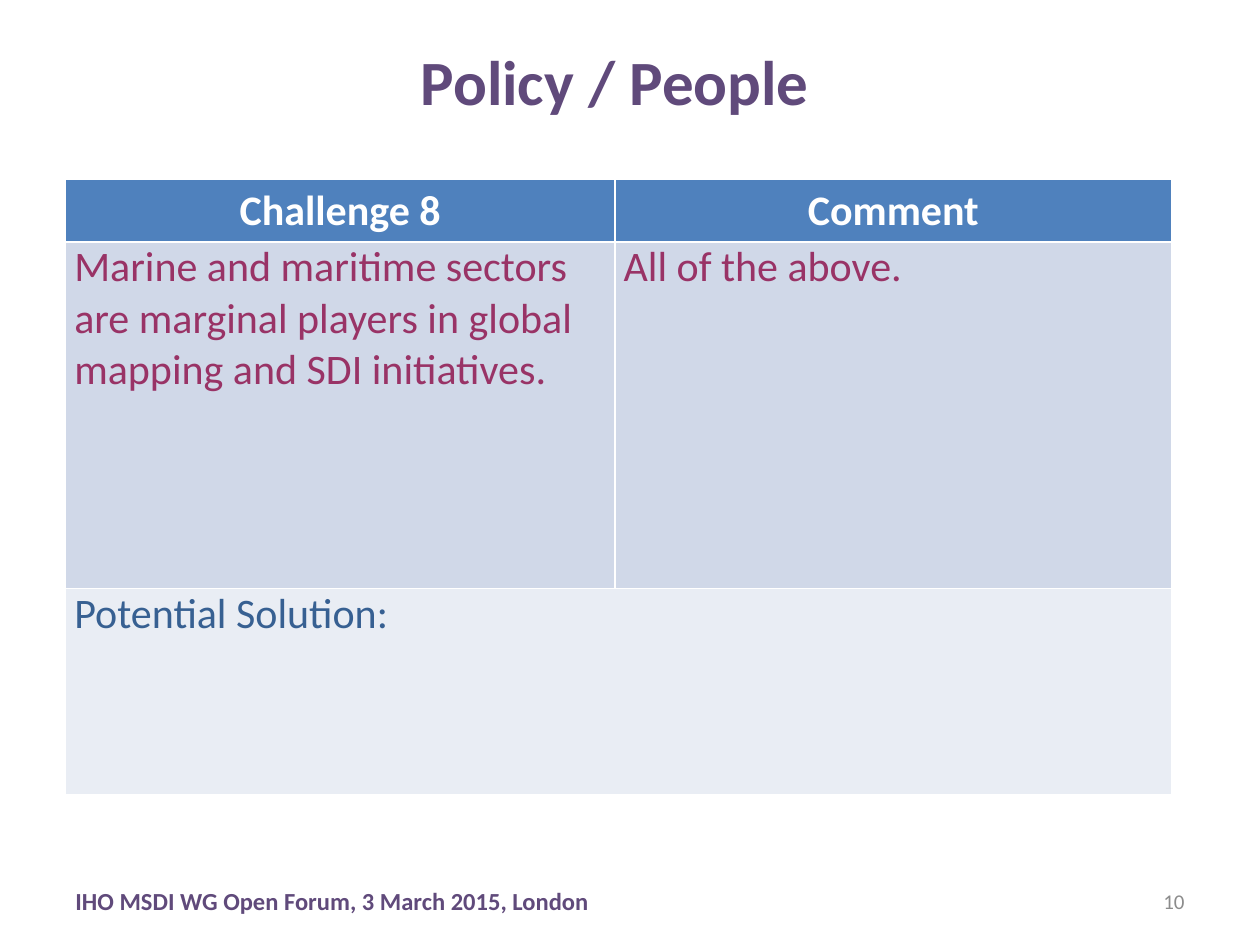
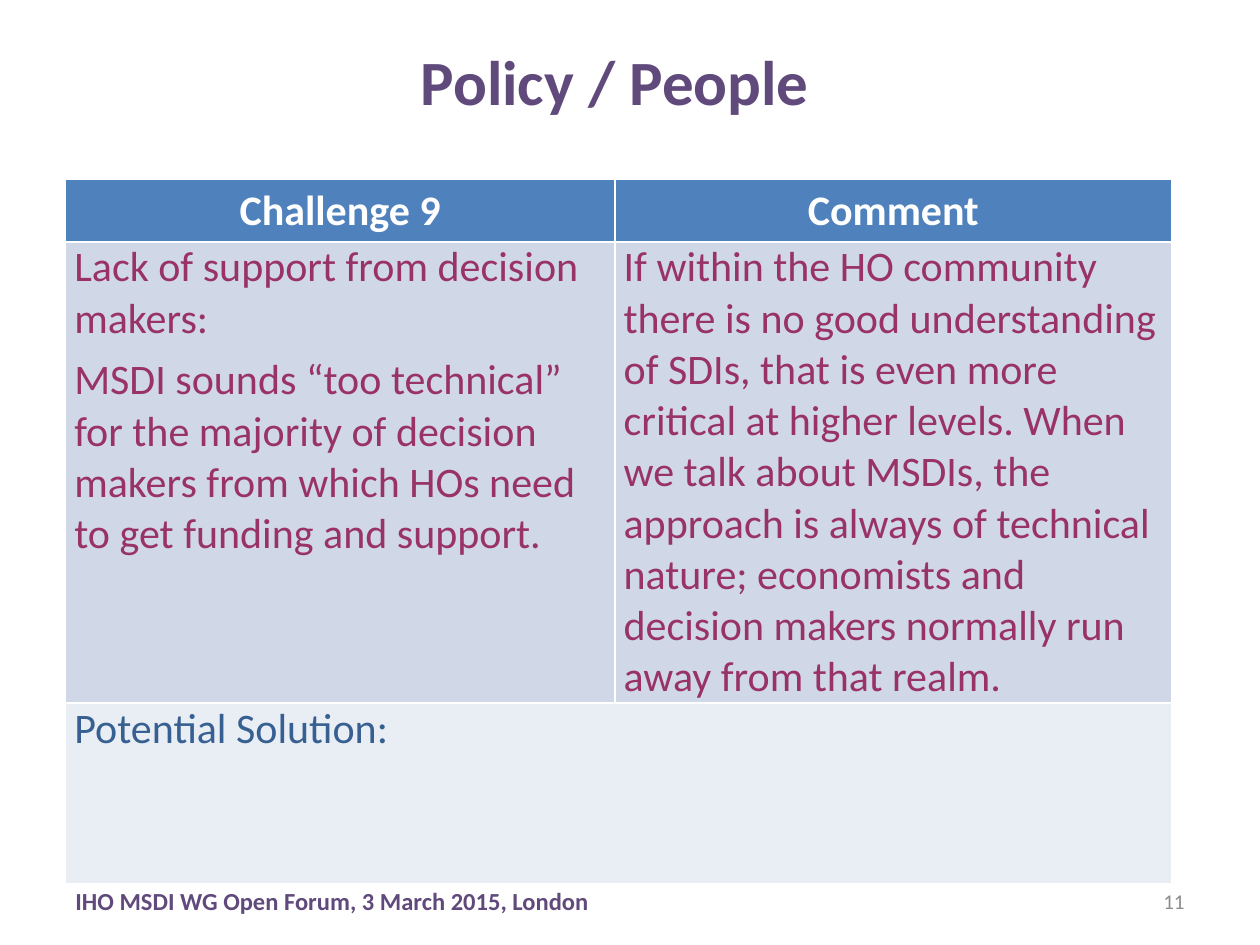
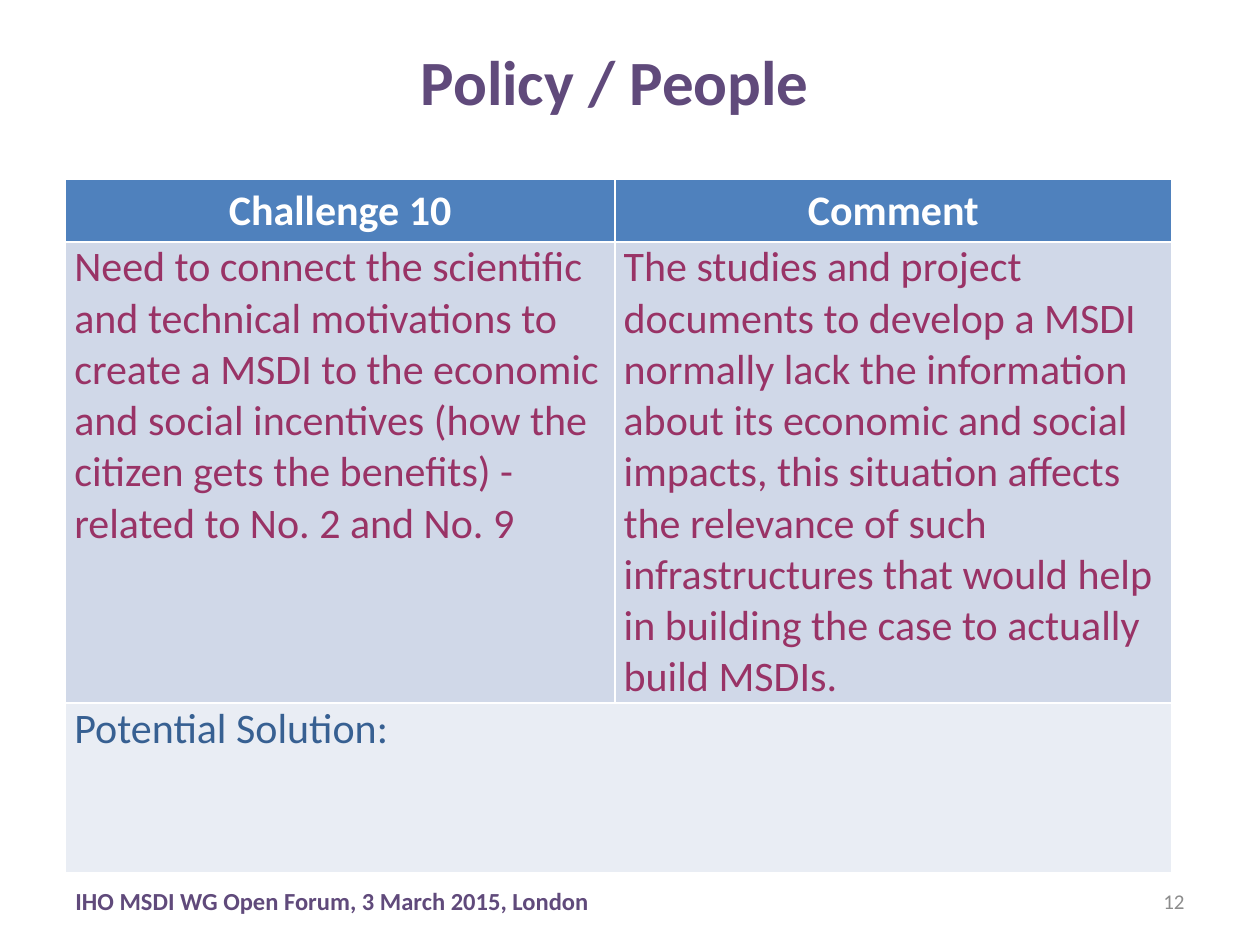
from pptx import Presentation
from pptx.dml.color import RGBColor
from pptx.enum import text as t
from pptx.util import Inches, Pt

# Shared look
FONT = "Calibri"
PURPLE = RGBColor(0x60, 0x4A, 0x7B)
GREY = RGBColor(0x8C, 0x8C, 0x8C)
WHITE = RGBColor(0xFF, 0xFF, 0xFF)
PLUM = RGBColor(0x99, 0x33, 0x66)
NAVY = RGBColor(0x37, 0x60, 0x92)
HEADER_BLUE = RGBColor(0x4F, 0x81, 0xBD)
BODY_BLUE = RGBColor(0xD0, 0xD8, 0xE8)
SOLUTION_BLUE = RGBColor(0xE9, 0xED, 0xF4)

TITLE = "Policy / People"
EVENT = "IHO MSDI WG Open Forum, 3 March 2015, London"
TITLE_BOX = (2.53, 0.09, 4.7, 1.09)
FOOTER_BOX = (0.5, 6.95, 9, 0.4)
TABLE_LEFT, TABLE_TOP = 0.52, 1.42
COLUMN_WIDTHS = (4.36, 4.42)
HEADER_HEIGHT = 0.5
FIRST_PAGE = 10

# Body and solution are row heights; each cell is a list of paragraphs
CHALLENGES = [
    dict(number=8, body=2.75, solution=1.64,
         challenge=["Marine and maritime sectors are marginal players in global "
                    "mapping and SDI initiatives."],
         comment=["All of the above."]),
    dict(number=9, body=3.66, solution=1.43,
         challenge=["Lack of support from decision makers:",
                    "MSDI sounds “too technical” for the majority of decision "
                    "makers from which HOs need to get funding and support."],
         comment=["If within the HO community there is no good understanding of "
                  "SDIs, that is even more critical at higher levels. When we talk "
                  "about MSDIs, the approach is always of technical nature; "
                  "economists and decision makers normally run away from that "
                  "realm."]),
    dict(number=10, body=3.66, solution=1.35,
         challenge=["Need to connect the scientific and technical motivations to "
                    "create a MSDI to the economic and social incentives (how the "
                    "citizen gets the benefits) - related to No. 2 and No. 9"],
         comment=["The studies and project documents to develop a MSDI normally "
                  "lack the information about its economic and social impacts, "
                  "this situation affects the relevance of such infrastructures "
                  "that would help in building the case to actually build MSDIs."]),
]


def write(frame, paragraphs, size=24, color=PLUM, bold=False,
          align=t.PP_ALIGN.LEFT, gap=6):
    """Fill a text frame, with a gap before each paragraph but the first."""
    for index, words in enumerate(paragraphs):
        paragraph = frame.add_paragraph() if index else frame.paragraphs[0]
        paragraph.alignment = align
        if index:
            paragraph.space_before = Pt(gap)
        run = paragraph.add_run()
        run.text = words
        run.font.name = FONT
        run.font.size = Pt(size)
        run.font.bold = bold
        run.font.color.rgb = color


def add_label(slide, box, words, **style):
    frame = slide.shapes.add_textbox(*map(Inches, box)).text_frame
    frame.word_wrap = True
    frame.vertical_anchor = t.MSO_ANCHOR.MIDDLE
    write(frame, [words], **style)


def add_footer(slide, box, page):
    left, top, width, height = box
    page_width = 2.33
    add_label(slide, (left, top, 6.08, height), EVENT,
              size=14, color=PURPLE, bold=True)
    add_label(slide, (left + width - page_width, top, page_width, height), str(page),
              size=12, color=GREY, align=t.PP_ALIGN.RIGHT)


def fill_cell(cell, paragraphs, fill, **style):
    cell.fill.solid()
    cell.fill.fore_color.rgb = fill
    write(cell.text_frame, paragraphs, **style)


def fill_body_cell(cell, paragraphs, fill, **style):
    cell.margin_left = cell.margin_right = Inches(0.07)
    cell.margin_top = cell.margin_bottom = 0
    fill_cell(cell, paragraphs, fill, **style)


def add_challenge_table(slide, left, top, item):
    heights = (HEADER_HEIGHT, item["body"], item["solution"])
    table = slide.shapes.add_table(
        len(heights), len(COLUMN_WIDTHS), Inches(left), Inches(top),
        Inches(sum(COLUMN_WIDTHS)), Inches(sum(heights))).table
    for column, width in zip(table.columns, COLUMN_WIDTHS):
        column.width = Inches(width)
    for row, height in zip(table.rows, heights):
        row.height = Inches(height)

    # Header and body, column by column
    columns = [(f"Challenge {item['number']}", item["challenge"]),
               ("Comment", item["comment"])]
    for index, (heading, body) in enumerate(columns):
        fill_cell(table.cell(0, index), [heading], HEADER_BLUE,
                  color=WHITE, bold=True, align=t.PP_ALIGN.CENTER)
        fill_body_cell(table.cell(1, index), body, BODY_BLUE)

    # Solution row across both columns
    solution = table.cell(2, 0)
    solution.merge(table.cell(2, 1))
    fill_body_cell(solution, ["Potential Solution:"], SOLUTION_BLUE, color=NAVY)


def add_challenge_slide(deck, page, item):
    slide = deck.slides.add_slide(deck.slide_layouts[6])
    add_footer(slide, FOOTER_BOX, page)
    add_challenge_table(slide, TABLE_LEFT, TABLE_TOP, item)
    add_label(slide, TITLE_BOX, TITLE, size=36, color=PURPLE, bold=True,
              align=t.PP_ALIGN.CENTER)


def main():
    deck = Presentation()
    deck.slide_width, deck.slide_height = Inches(10), Inches(7.5)
    for page, item in enumerate(CHALLENGES, FIRST_PAGE):
        add_challenge_slide(deck, page, item)
    deck.save("out.pptx")


if __name__ == "__main__":
    main()
